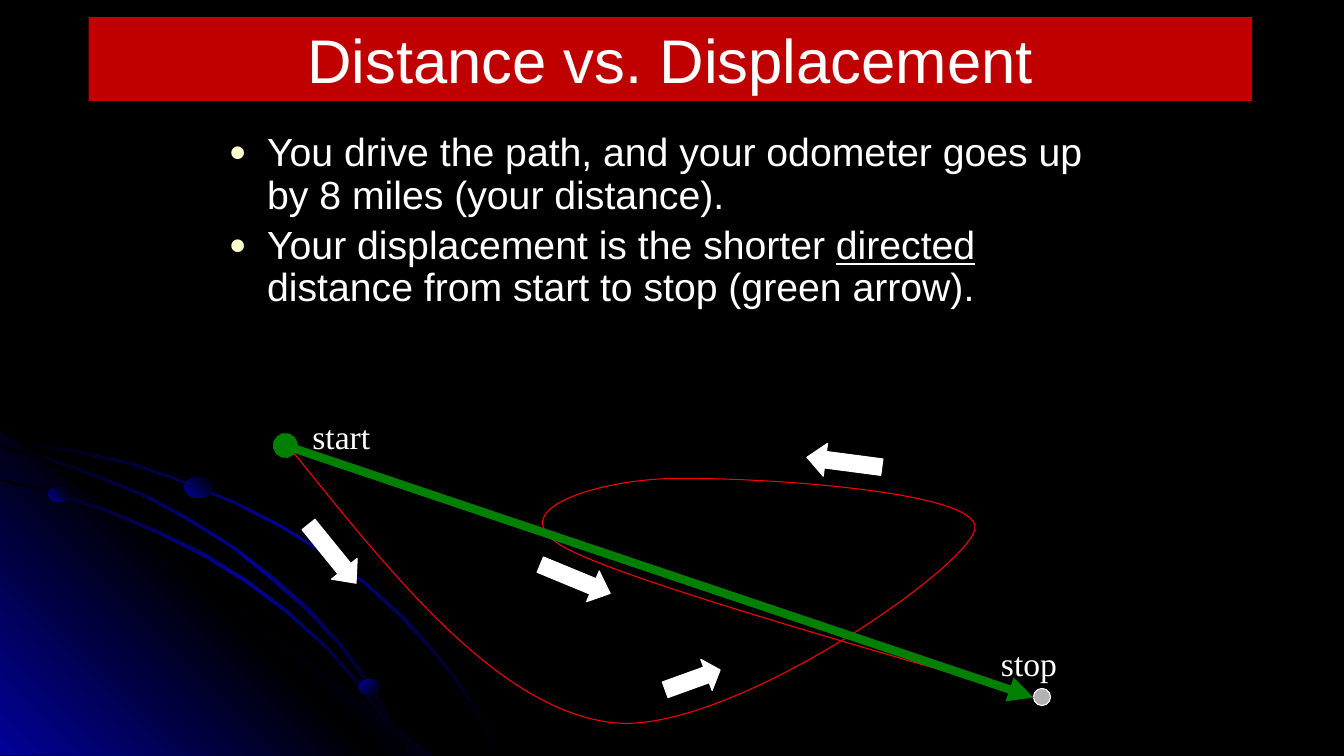
from lxml import etree
from pptx import Presentation
from pptx.dml.color import RGBColor
from pptx.enum.shapes import MSO_CONNECTOR as CONN, MSO_SHAPE as SHAPE
from pptx.enum.text import MSO_ANCHOR as ANCHOR, PP_ALIGN as ALIGN
from pptx.oxml import parse_xml
from pptx.oxml.ns import nsdecls, qn
from pptx.util import Emu, Pt

PX = 9144  # 100 px to the inch
W, H = 1333, 750
BLUE, BLACK, WHITE, GREEN = "010199", "000000", "FFFFFF", "008000"

# Curved bands of the backdrop, as closed outlines
BANDS = [
    [(76, 447), (37, 441), (0, 435), (0, 438), (37, 443), (75, 449), (129, 461),
     (180, 478), (231, 499), (278, 523), (321, 549), (361, 579), (397, 612),
     (431, 649), (450, 673), (467, 698), (481, 723), (493, 749), (496, 749),
     (483, 723), (469, 698), (453, 673), (433, 648), (400, 611), (363, 578),
     (322, 548), (279, 521), (232, 497), (182, 477), (131, 459)],
    [(380, 714), (392, 732), (401, 749), (404, 749), (394, 730), (382, 712),
     (355, 676), (323, 640), (286, 606), (246, 576), (203, 549), (156, 526),
     (105, 505), (54, 488), (0, 475), (0, 477), (51, 490), (103, 507), (153, 528),
     (200, 551), (244, 578), (284, 608), (321, 641), (353, 677)],
    [(0, 442), (0, 444), (49, 457), (99, 475), (146, 494), (189, 518), (231, 544),
     (269, 575), (303, 605), (337, 641), (356, 667), (374, 694), (389, 722),
     (401, 749), (404, 749), (391, 720), (376, 693), (358, 665), (339, 639),
     (306, 603), (272, 573), (233, 543), (191, 516), (149, 493), (101, 473),
     (51, 455)],
]
CORNER = [(429, 749), (0, 749), (0, 427)]
BEADS = [((48, 483, 20, 15), 315), ((356, 674, 21, 16), 45), ((183, 473, 28, 21), 315)]

# Driven path relative to the diagram: a start, then three points per Bezier segment
ROUTE = [(17, 42), (119, 169), (221, 296), (333, 309), (446, 321), (683, 157),
         (692, 117), (700, 77), (451, 64), (383, 67), (315, 70), (222, 98),
         (283, 134), (344, 170), (672, 259), (750, 284)]
# Direction arrows: x, y, width, rotation, head length
ARROWS = [(17, 125, 75, 51, 0.562), (525, 34, 75, 187.5, 0.562),
          (383, 250, 58, 340.1, 0.438), (258, 150, 75, 22.4, 0.562)]


def px(*values):
    return [Emu(v * PX) for v in values]


def rgb(color):
    return RGBColor.from_string(color)


def assign(obj, formats):
    for name, value in formats.items():
        setattr(obj, name, value)


def style(sp, fill=None, line=None):
    sp.shadow.inherit = False
    if fill:
        sp.fill.solid()
        sp.fill.fore_color.rgb = rgb(fill)
    else:
        sp.fill.background()
    if line:
        sp.line.color.rgb = rgb(line)
        sp.line.width = Pt(0.75)
    else:
        sp.line.fill.background()
    return sp


def gradient(sp, colors, angle):
    style(sp, BLACK)
    last = len(colors) - 1
    stops = "".join(f'<a:gs pos="{100000 * i // last}"><a:srgbClr val="{c}"/></a:gs>'
                    for i, c in enumerate(colors))
    solid = sp._element.spPr.find(qn("a:solidFill"))
    solid.getparent().replace(solid, parse_xml(
        f'<a:gradFill {nsdecls("a")} rotWithShape="1"><a:gsLst>{stops}</a:gsLst>'
        f'<a:lin ang="{angle * 60000}" scaled="1"/></a:gradFill>'))


def outline(s, points, close=True):
    builder = s.shapes.build_freeform(*points[0], scale=PX)
    builder.add_line_segments(points[1:], close=close)
    return builder.convert_to_shape()


def add_run(p, text, **formats):
    r = p.add_run()
    r.text = text
    r.font.color.rgb = rgb(WHITE)
    assign(r.font, formats)


def add_backdrop(s):
    s.background.fill.solid()
    s.background.fill.fore_color.rgb = rgb(BLACK)
    first, *others = BANDS
    gradient(outline(s, first), [BLACK, BLUE, BLACK], 45)
    gradient(outline(s, CORNER), [BLUE, BLACK, BLUE], 315)
    for band in others:
        gradient(outline(s, band), [BLACK, BLUE, BLACK], 45)
    for box, angle in BEADS:
        gradient(s.shapes.add_shape(SHAPE.OVAL, *px(*box)), [BLUE, BLACK], angle)


def place(sp, x, y, w, h):
    sp.left, sp.top, sp.width, sp.height = px(x, y, w, h)


def add_title(s, box, text):
    sp = s.shapes.title
    place(sp, *box)
    sp.fill.solid()
    sp.fill.fore_color.rgb = rgb("C00000")
    tf = sp.text_frame
    tf.vertical_anchor = ANCHOR.MIDDLE
    p = tf.paragraphs[0]
    p.alignment = ALIGN.CENTER
    add_run(p, text, name="Arial", size=Pt(44))


def add_bullets(s, box, items):
    sp = s.placeholders[1]
    place(sp, *box)
    tf = sp.text_frame
    for i, runs in enumerate(items):
        p = tf.add_paragraph() if i else tf.paragraphs[0]
        assign(p, {"line_spacing": 0.9, "space_before": Pt(5.6), "alignment": ALIGN.LEFT})
        pPr = p._p.get_or_add_pPr()
        pPr.set("marL", str(38 * PX))
        pPr.set("indent", str(-38 * PX))
        for xml in ('<a:buClr {}><a:srgbClr val="FFFFCC"/></a:buClr>',
                    '<a:buSzPct {} val="75000"/>',
                    '<a:buFont {} typeface="Arial"/>',
                    '<a:buChar {} char="●"/>'):
            pPr.append(parse_xml(xml.format(nsdecls("a"))))
        for text, underline in runs:
            add_run(p, text, name="Arial", size=Pt(28), underline=underline)


def add_route(s, x, y):
    sp = style(outline(s, [(x + dx, y + dy) for dx, dy in ROUTE], close=False), line="FF0000")
    # Turn each three line points into one Bezier segment
    lines = list(sp._element.iter(qn("a:lnTo")))
    for i in range(0, len(lines), 3):
        curve = etree.Element(qn("a:cubicBezTo"))
        lines[i].addprevious(curve)
        for line in lines[i:i + 3]:
            curve.append(line[0])
            line.getparent().remove(line)


def add_displacement(s, start, stop):
    line = s.shapes.add_connector(CONN.STRAIGHT, *px(*start, *stop))
    line.line.color.rgb = rgb(GREEN)
    line.line.width = Pt(6)
    ln = line.line._get_or_add_ln()
    for tag, kind in (("headEnd", "oval"), ("tailEnd", "triangle")):
        etree.SubElement(ln, qn(f"a:{tag}")).set("type", kind)
    etree.SubElement(line._element.spPr, qn("a:effectLst"))


def add_label(s, text, box):
    tf = s.shapes.add_textbox(*px(*box)).text_frame
    tf.word_wrap = True
    add_run(tf.paragraphs[0], text, name="Times New Roman", size=Pt(24))


def add_diagram(s, x, y):
    for dx, dy, w, rotation, head in ARROWS:
        sp = s.shapes.add_shape(SHAPE.RIGHT_ARROW, *px(x + dx, y + dy, w, 33))
        style(sp, WHITE, WHITE)
        sp.rotation = rotation
        sp.adjustments[1] = head
    for dx, dy in ((0, 25), (750, 275)):
        style(s.shapes.add_shape(SHAPE.OVAL, *px(x + dx, y + dy, 17, 17)), "B2B2B2", WHITE)
    add_label(s, "start", (x + 25, y, 158, 50))
    add_label(s, "stop", (x + 708, y + 225, 100, 50))
    add_route(s, x, y)
    add_displacement(s, (x + 8, y + 34), (x + 750, y + 284))


def main():
    prs = Presentation()
    prs.slide_width, prs.slide_height = px(W, H)
    s = prs.slides.add_slide(prs.slide_layouts[1])
    add_backdrop(s)
    add_title(s, (88, 17, 1154, 83), "Distance vs. Displacement")
    add_bullets(s, (217, 127, 900, 250), [
        [("You drive the path, and your odometer goes up by 8 miles (your distance).", False)],
        [("Your displacement is the shorter ", False), ("directed", True),
         (" distance from start to stop (green arrow).", False)],
    ])
    add_diagram(s, 275, 408)
    prs.save("out.pptx")


if __name__ == "__main__":
    main()
